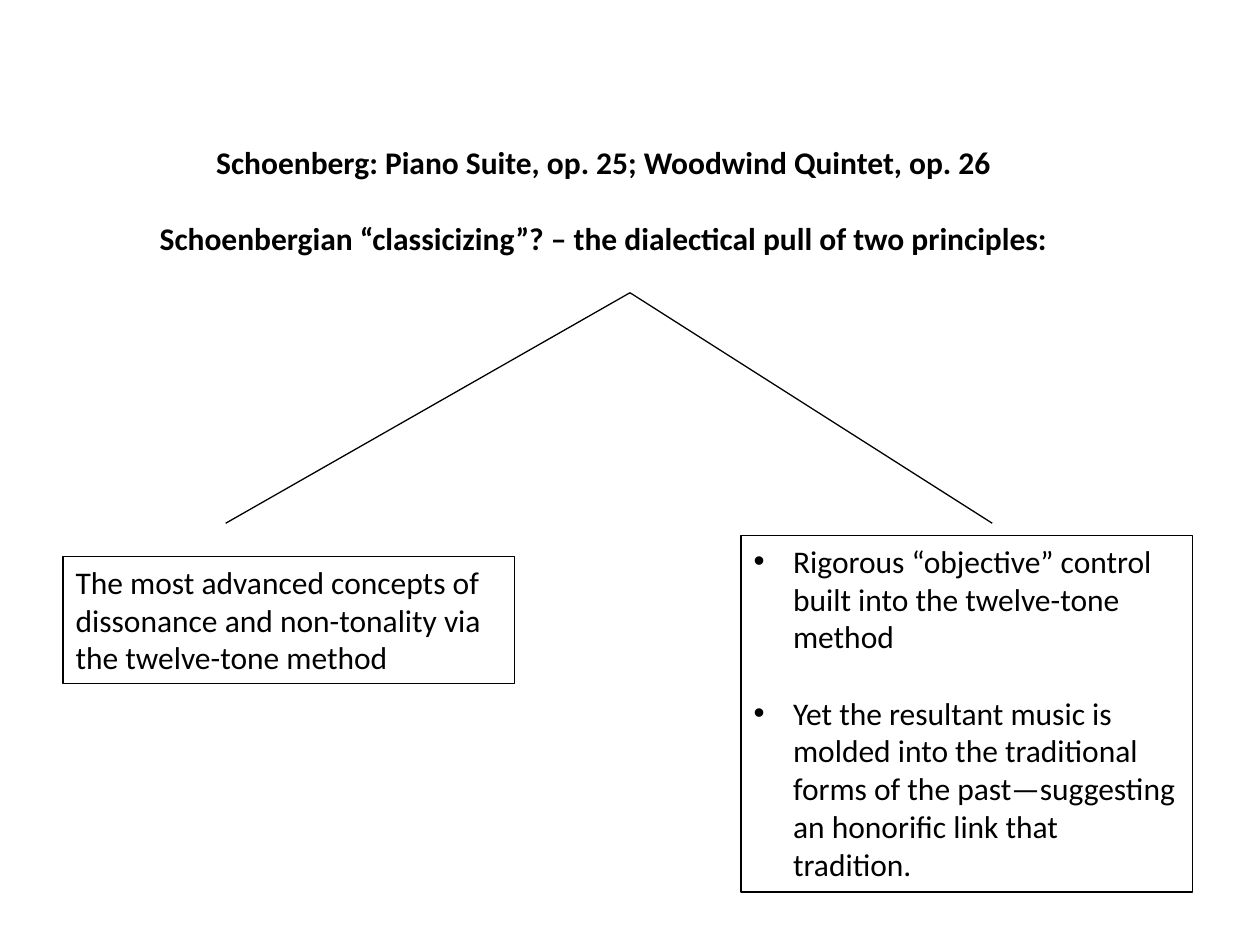
"""Build a slide on the two opposing principles in Schoenberg's classicizing works."""
from lxml.etree import SubElement
from pptx import Presentation
from pptx.dml.color import RGBColor
from pptx.enum.shapes import MSO_CONNECTOR
from pptx.enum.text import MSO_ANCHOR, MSO_AUTO_SIZE, PP_ALIGN
from pptx.oxml.ns import qn
from pptx.util import Pt

BLACK = RGBColor(0x00, 0x00, 0x00)
TEXT_SIZE = Pt(18)
BLANK_LINE = Pt(22)
HAIRLINE = Pt(0.75)
BULLET_INDENT = Pt(22.5)

HEADINGS = [
    "Schoenberg: Piano Suite, op. 25; Woodwind Quintet, op. 26",
    "Schoenbergian “classicizing”? – the dialectical pull of two principles:",
]
DISSONANCE = [
    "The most advanced concepts of dissonance and non-tonality via the twelve-tone method",
]
CONTROL = [
    "Rigorous “objective” control built into the twelve-tone method",
    "Yet the resultant music is molded into the traditional forms of the past—suggesting "
    "an honorific link that tradition.",
]


def fill_text(holder, box, texts, align, bold=False):
    holder.left, holder.top, holder.width, holder.height = (Pt(v) for v in box)
    frame = holder.text_frame
    frame.word_wrap = True
    frame.auto_size = MSO_AUTO_SIZE.NONE
    frame.vertical_anchor = MSO_ANCHOR.TOP
    frame.text = "\n".join(texts)
    for index, paragraph in enumerate(frame.paragraphs):
        paragraph.alignment = align
        paragraph.space_before = BLANK_LINE if index else Pt(0)
        paragraph.font.name = "Calibri"
        paragraph.font.size = TEXT_SIZE
        paragraph.font.bold = bold
        paragraph.font.color.rgb = BLACK


def set_bullet(paragraph, bulleted):
    indent = BULLET_INDENT if bulleted else 0
    properties = paragraph._p.get_or_add_pPr()
    properties.set("marL", str(indent))
    properties.set("indent", str(-indent))
    bullet = SubElement(properties, qn("a:buChar" if bulleted else "a:buNone"))
    if bulleted:
        bullet.set("char", "•")
    properties.find(qn("a:defRPr")).addprevious(bullet)


deck = Presentation()
deck.slide_width, deck.slide_height = Pt(720), Pt(540)
slide = deck.slides.add_slide(deck.slide_layouts.get_by_name("Two Content"))
title, dissonance, control = list(slide.placeholders)[:3]

fill_text(title, (36, 78, 618, 72.7), HEADINGS, PP_ALIGN.CENTER, bold=True)

principles = [
    (dissonance, (36, 318, 258, 72.7), DISSONANCE, False),
    (control, (423.5, 306, 258, 203.8), CONTROL, True),
]
for principle, box, texts, bulleted in principles:
    fill_text(principle, box, texts, PP_ALIGN.LEFT)
    principle.line.color.rgb = BLACK
    principle.line.width = HAIRLINE
    for paragraph in principle.text_frame.paragraphs:
        set_bullet(paragraph, bulleted)

for branch_end in (129, 567):
    branch = slide.shapes.add_connector(
        MSO_CONNECTOR.STRAIGHT, Pt(360), Pt(167.3), Pt(branch_end), Pt(299)
    )
    branch.line.color.rgb = BLACK
    branch.line.width = HAIRLINE
    SubElement(branch._element.spPr, qn("a:effectLst"))

deck.save("out.pptx")
